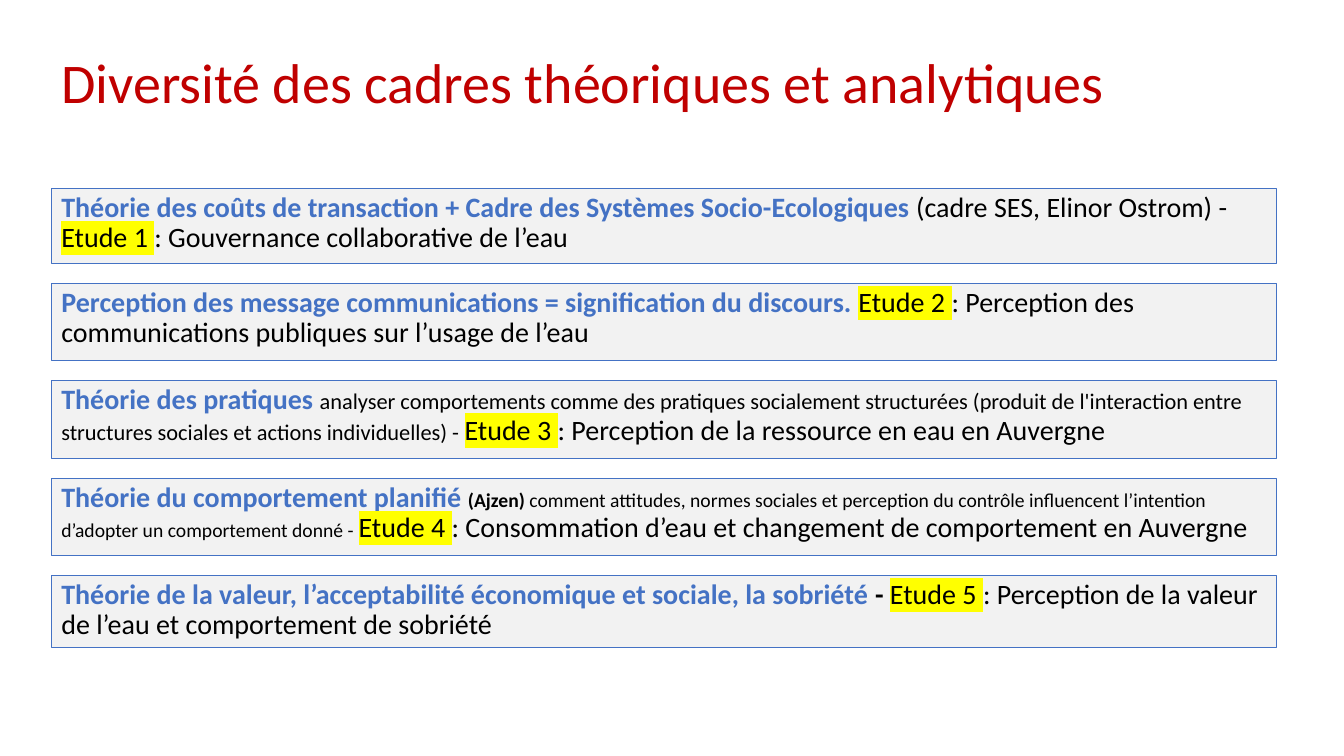
from lxml.etree import SubElement
from pptx import Presentation
from pptx.dml.color import RGBColor
from pptx.enum.shapes import MSO_SHAPE
from pptx.enum.text import MSO_ANCHOR as Anchor, PP_ALIGN as Align
from pptx.oxml.ns import qn
from pptx.util import Pt

RED = RGBColor(0xC0, 0x00, 0x00)
BLUE = RGBColor(0x44, 0x72, 0xC4)
GREY = RGBColor(0xF2, 0xF2, 0xF2)
BLACK = RGBColor(0x00, 0x00, 0x00)
YELLOW = RGBColor(0xFF, 0xFF, 0x00)

LEFT, BOX_WIDTH = 36.7, 874.8
FIRST_TOP, GAP = 134.6, 14.2


class SlideBuilder:
    """Holds the style and the current slide."""

    font_name = "Calibri"
    body_size = 20
    line_spacing = 0.9

    def __init__(self, slide):
        self.slide = slide

    def style_run(self, run, size, color, bold=False, highlight=None):
        run.font.size = Pt(size)
        run.font.bold = bold
        run.font.color.rgb = color
        if highlight is not None:
            # The highlight must come between the fill and the font name
            element = SubElement(run.font._element, qn("a:highlight"))
            SubElement(element, qn("a:srgbClr"), val=str(highlight))
        run.font.name = self.font_name

    def title(self, text, top, width, height):
        shape = self.slide.shapes.add_textbox(Pt(LEFT), Pt(top), Pt(width), Pt(height))
        frame = shape.text_frame
        frame.word_wrap = True
        frame.vertical_anchor = Anchor.MIDDLE
        frame.text = text
        paragraph = frame.paragraphs[0]
        paragraph.line_spacing = self.line_spacing
        self.style_run(paragraph.runs[0], 40, RED)

    def theory_box(self, top, height, theory, details, study, topic):
        shape = self.slide.shapes.add_shape(
            MSO_SHAPE.RECTANGLE, Pt(LEFT), Pt(top), Pt(BOX_WIDTH), Pt(height))
        shape.shadow.inherit = False
        shape.fill.solid()
        shape.fill.fore_color.rgb = GREY
        shape.line.color.rgb = BLUE
        shape.line.width = Pt(0.75)

        frame = shape.text_frame
        frame.word_wrap = True
        frame.vertical_anchor = Anchor.TOP
        paragraph = frame.paragraphs[0]
        paragraph.alignment = Align.LEFT
        paragraph.line_spacing = self.line_spacing
        paragraph.space_before = Pt(10)

        size = self.body_size
        parts = [(theory, size, BLUE, True)]
        parts += [(text, detail_size, BLACK, bold) for text, detail_size, bold in details]
        parts += [(study, size, BLACK, False, YELLOW), (topic, size, BLACK)]
        for text, *style in parts:
            run = paragraph.add_run()
            run.text = text
            self.style_run(run, *style)


# Each theory: box height, name, details (text, size, bold), topic of the study
THEORIES = [
    (53.5, "Théorie des coûts de transaction + Cadre des Systèmes Socio-Ecologiques ",
     [("(cadre SES, Elinor Ostrom) - ", 20, False)],
     "Gouvernance collaborative de l’eau"),
    (55.4, "Perception des message communications = signification du discours. ",
     [],
     "Perception des communications publiques sur l’usage de l’eau"),
    (55.4, "Théorie des pratiques ",
     [("analyser comportements comme des pratiques socialement structurées "
       "(produit de l'interaction entre structures sociales et actions "
       "individuelles) - ", 16, False)],
     "Perception de la ressource en eau en Auvergne"),
    (55.4, "Théorie du comportement planifié ",
     [("(Ajzen) ", 14, True),
      ("comment attitudes, normes sociales et perception du contrôle influencent "
       "l’intention d’adopter un comportement donné - ", 14, False)],
     "Consommation d’eau et changement de comportement en Auvergne"),
    (51.2, "Théorie de la valeur, l’acceptabilité économique et sociale, la sobriété ",
     [("- ", 20, True)],
     "Perception de la valeur de l’eau et comportement de sobriété"),
]


def main():
    presentation = Presentation()
    presentation.slide_width, presentation.slide_height = Pt(960), Pt(540)
    builder = SlideBuilder(presentation.slides.add_slide(presentation.slide_layouts[6]))

    # Title
    builder.title("Diversité des cadres théoriques et analytiques", 35.3, 828, 51.1)

    # Stack of theory boxes
    top = FIRST_TOP
    for number, (height, theory, details, topic) in enumerate(THEORIES, start=1):
        builder.theory_box(top, height, theory, details, f"Etude {number} ", f": {topic}")
        top += height + GAP

    presentation.save("out.pptx")


if __name__ == "__main__":
    main()
